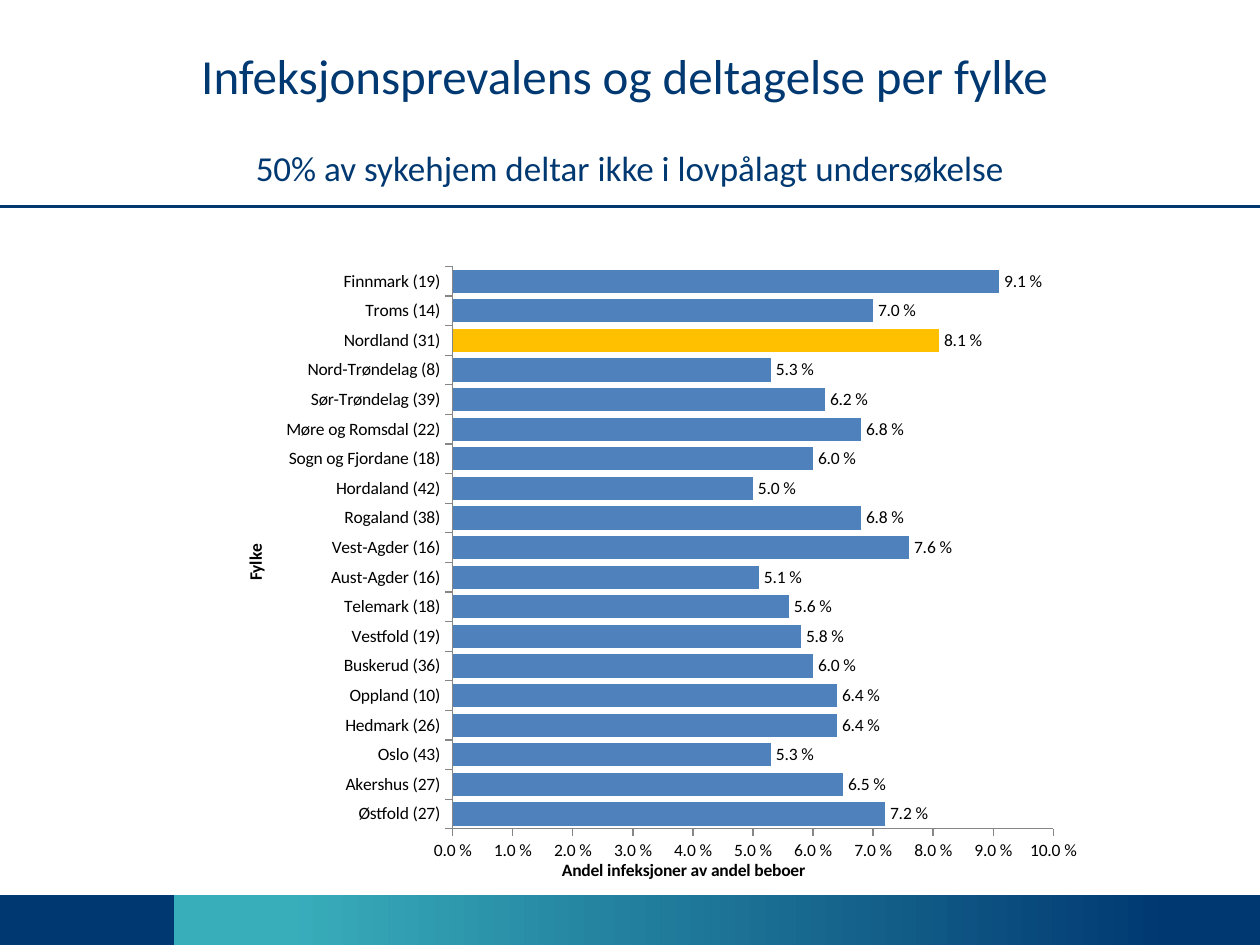
from lxml import etree
from pptx import Presentation
from pptx.chart.data import CategoryChartData
from pptx.dml.color import RGBColor
from pptx.enum import chart as ch, shapes, text
from pptx.oxml.ns import qn
from pptx.util import Pt

NAVY, TEAL, BLUE, GOLD = "003871", "39AEBB", "4F81BD", "FFC000"
GREY, BLACK = "868686", "000000"
FONT, PCT = "Calibri", "0.0\\ %"
WIDE, HIGH = 720, 540
MARK = "Nordland (31)"
RATES = [
    ("Østfold (27)", 0.072), ("Akershus (27)", 0.065), ("Oslo (43)", 0.053),
    ("Hedmark (26)", 0.064), ("Oppland (10)", 0.064),
    ("Buskerud (36)", 0.06), ("Vestfold (19)", 0.058),
    ("Telemark (18)", 0.056), ("Aust-Agder (16)", 0.051),
    ("Vest-Agder (16)", 0.076), ("Rogaland (38)", 0.068),
    ("Hordaland (42)", 0.05), ("Sogn og Fjordane (18)", 0.06),
    ("Møre og Romsdal (22)", 0.068), ("Sør-Trøndelag (39)", 0.062),
    ("Nord-Trøndelag (8)", 0.053), (MARK, 0.081), ("Troms (14)", 0.07),
    ("Finnmark (19)", 0.091),
]


def rgb(code):
    return RGBColor.from_string(code)


def style(font, size, color, bold=False):
    font.name, font.size, font.bold = FONT, Pt(size), bold
    font.color.rgb = rgb(color)


def band(slide, x, y, w, h, left, right=None):
    """Footer block, plain or fading from left to right."""
    box = slide.shapes.add_shape(
        shapes.MSO_SHAPE.RECTANGLE, Pt(x), Pt(y), Pt(w), Pt(h))
    box.shadow.inherit = False
    box.line.fill.background()
    if right is None:
        box.fill.solid()
        box.fill.fore_color.rgb = rgb(left)
        return
    box.fill.gradient()
    box.fill.gradient_angle = 0
    for stop, color, spot in zip(box.fill.gradient_stops,
                                 (left, right), (0.1, 0.92)):
        stop.color.rgb = rgb(color)
        stop.position = spot


def footer(slide, x, y, w, h):
    head = 99.4
    band(slide, x + head, y, w - head, h, TEAL, NAVY)
    band(slide, x, y, head, h, NAVY)


def rule(slide, x, y, w):
    line = slide.shapes.add_connector(
        shapes.MSO_CONNECTOR.STRAIGHT, Pt(x), Pt(y), Pt(x + w), Pt(y))
    line.line.color.rgb = rgb(NAVY)
    line.line.width = Pt(2)
    etree.SubElement(line._element.spPr, qn("a:effectLst"))


def title(slide, x, y, w, h):
    frame = slide.shapes.add_textbox(Pt(x), Pt(y), Pt(w), Pt(h)).text_frame
    frame.word_wrap = True
    frame.vertical_anchor = text.MSO_ANCHOR.MIDDLE
    first, second = frame.paragraphs[0], frame.add_paragraph()
    second.space_before = Pt(24)
    for para, words, size in (
            (first, "Infeksjonsprevalens og deltagelse per fylke ", 28),
            (second, "50% av sykehjem deltar ikke i lovpålagt undersøkelse",
             20)):
        para.alignment = text.PP_ALIGN.CENTER
        run = para.add_run()
        run.text = words
        style(run.font, size, NAVY)


def place(node, index, **spots):
    """Give a chart part a fixed layout, in shares of the chart."""
    for old in node.findall(qn("c:layout")):
        node.remove(old)
    layout = etree.Element(qn("c:layout"))
    node.insert(index, layout)
    manual = etree.SubElement(layout, qn("c:manualLayout"))
    if "w" in spots:
        etree.SubElement(manual, qn("c:layoutTarget")).set("val", "inner")
    for key in ("xMode", "yMode"):
        etree.SubElement(manual, qn("c:" + key)).set("val", "edge")
    for key, share in spots.items():
        etree.SubElement(manual, qn("c:" + key)).set("val", str(share))


def axis(part, name, x, y):
    part.has_major_gridlines = False
    part.major_tick_mark = ch.XL_TICK_MARK.OUTSIDE
    part.format.line.color.rgb = rgb(GREY)
    part.format.line.width = Pt(0.75)
    style(part.tick_labels.font, 10, BLACK)
    run = part.axis_title.text_frame.paragraphs[0].add_run()
    run.text = name
    style(run.font, 10, BLACK, True)
    place(part.axis_title._element, 1, x=x, y=y)


def rates(slide, x, y, w, h):
    data = CategoryChartData(number_format=PCT)
    data.categories = [name for name, _ in RATES]
    data.add_series("Series 1", [rate for _, rate in RATES])
    chart = slide.shapes.add_chart(
        ch.XL_CHART_TYPE.BAR_CLUSTERED, Pt(x), Pt(y), Pt(w), Pt(h),
        data).chart
    chart.has_legend = chart.has_title = False
    style(chart.font, 10, BLACK)
    axis(chart.category_axis, "Fylke", 0.04, 0.49)
    value = chart.value_axis
    axis(value, "Andel infeksjoner av andel beboer", 0.4, 0.96)
    value.minimum_scale, value.maximum_scale = 0, 0.1
    value.major_unit = 0.01
    value.tick_labels.number_format = PCT
    value.tick_labels.number_format_is_linked = False

    plot = chart.plots[0]
    plot.gap_width = 27
    plot.vary_by_categories = False
    plot.has_data_labels = True
    labels = plot.data_labels
    labels.show_value = True
    labels.number_format, labels.number_format_is_linked = PCT, False
    labels.position = ch.XL_LABEL_POSITION.OUTSIDE_END
    style(labels.font, 10, BLACK)
    series = plot.series[0]
    spot = [name for name, _ in RATES].index(MARK)
    for bar, color in ((series, BLUE), (series.points[spot], GOLD)):
        bar.format.fill.solid()
        bar.format.fill.fore_color.rgb = rgb(color)
    area = chart._chartSpace.chart.plotArea
    place(area, 0, x=0.28, y=0.08, w=0.68, h=0.84)


def main():
    deck = Presentation()
    deck.slide_width, deck.slide_height = Pt(WIDE), Pt(HIGH)
    slide = deck.slides.add_slide(deck.slide_layouts[6])
    footer(slide, 0, 511.6, WIDE, 28.4)
    rule(slide, 0, 118, WIDE)
    title(slide, 36, 21.6, 648, 90)
    rates(slide, 117.4, 121.7, 504.7, 384.5)
    deck.save("out.pptx")


if __name__ == "__main__":
    main()
